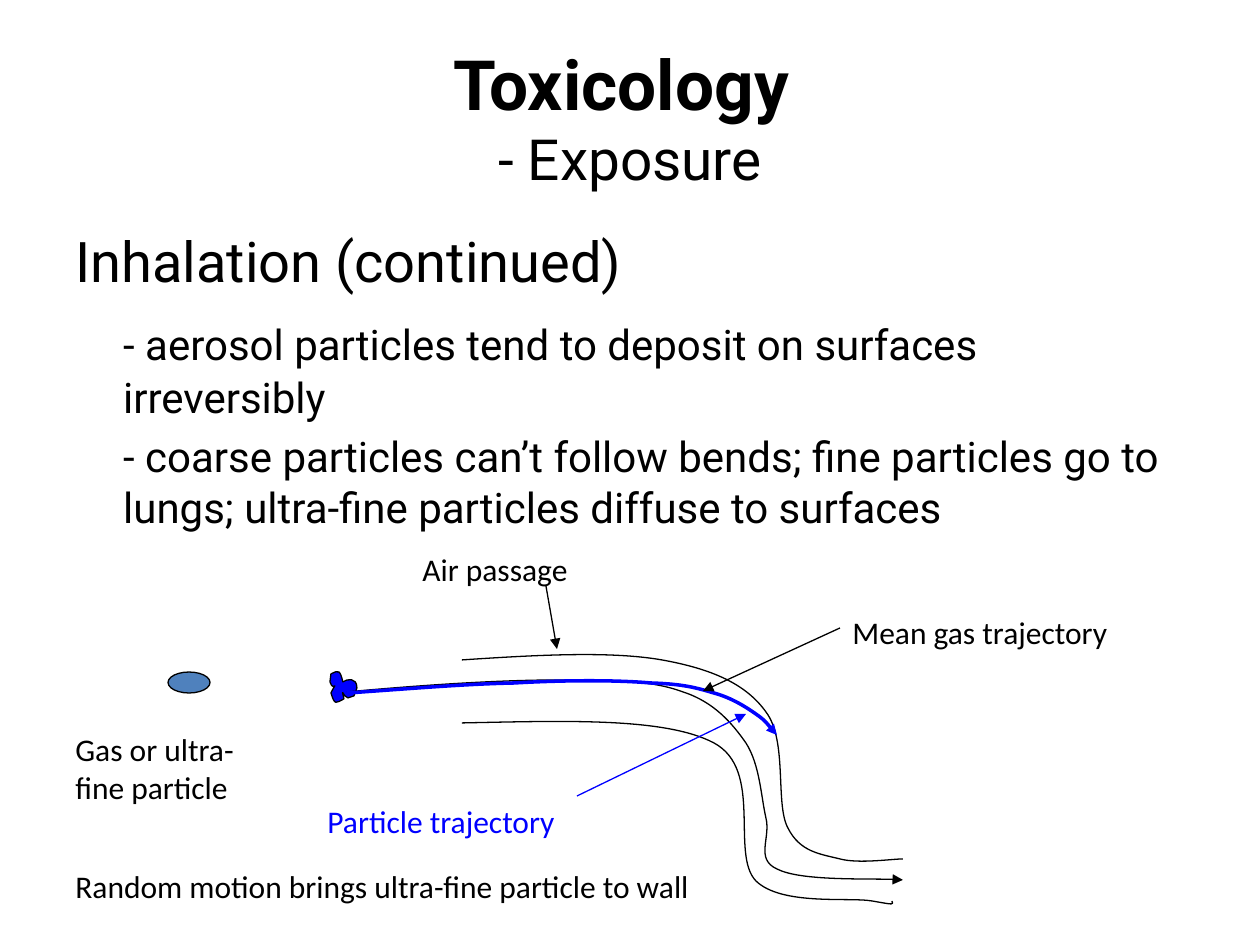
from lxml import etree
from pptx import Presentation
from pptx import util as u
from pptx.dml.color import RGBColor
from pptx.enum import shapes, text
from pptx.oxml.ns import qn

PX = u.Inches(1) / 126
THEME = {
    "black": RGBColor(0, 0, 0), "blue": RGBColor(0, 0, 255),
    "gas": RGBColor(0x4F, 0x81, 0xBD),
    "heading_font": "Roboto", "label_font": "Calibri",
    "title": 39.6, "subtitle": 32.4, "heading": 32, "body": 24, "label": 18,
    "thin": 0.75, "thick": 2,
}

# Content: boxes are (left, top, width, height) in px
TITLE_BOX, BODY_BOX = (63, 38, 1134, 157), (63, 220, 1134, 624)
TITLE = [("Toxicology ", "title", True), ("- Exposure", "subtitle", False)]
# Each paragraph: space before in points, then runs of (text, size)
BODY = [
    (0, [("Inhalation (continued)", "heading")]),
    (6.4, [("\t", "heading"),
           ("- aerosol particles tend to deposit on surfaces irreversibly", "body")]),
    (4.8, [("\t- coarse particles can’t follow bends; fine particles go to lungs; "
            "ultra-fine particles diffuse to surfaces", "body")]),
]
LABELS = [
    ("Mean gas trajectory", (840, 607, 420, 50), "black"),
    ("Particle trajectory", (315, 796, 420, 50), "blue"),
    ("Air passage", (410, 544, 525, 50), "black"),
    ("Gas or ultra-fine particle", (63, 724, 189, 126), "black"),
    ("Random motion brings ultra-fine particle to wall", (63, 861, 683, 50), "black"),
]
POINTERS = [
    ((577, 796), (746, 714), "blue"),
    ((840, 628), (703, 691), "black"),
    ((546, 586), (557, 649), "black"),
]
GAS_PARTICLE = (168, 672, 42, 21)

# Bezier chains: a start point, then two control points and an end per curve
LOWER_WALL = [
    (462, 723), (563, 721), (665, 717), (714, 743), (764, 770), (730, 854), (756, 881),
    (782, 906), (849, 897), (872, 901), (895, 905), (893, 905), (892, 901)]
UPPER_WALL = [
    (462, 660), (537, 655), (611, 651), (662, 660), (712, 669), (746, 684), (766, 712),
    (788, 741), (775, 804), (788, 828), (800, 852), (820, 854), (840, 859),
    (859, 864), (892, 859), (903, 859)]
COARSE_PARTICLE = [
    (343, 682), (340, 670), (339, 670), (331, 674), (331, 677), (330, 679), (330, 682),
    (334, 694), (339, 677), (331, 693), (335, 706), (336, 703), (344, 699),
    (341, 685), (343, 697), (348, 698), (350, 698), (352, 696), (354, 696),
    (355, 693), (357, 690), (357, 688), (357, 677), (347, 679), (343, 682)]
GAS_PATH = [
    (347, 692), (423, 685), (500, 680), (557, 680), (612, 680), (651, 680), (683, 692),
    (714, 702), (732, 723), (746, 743), (760, 765), (761, 796), (766, 818),
    (771, 838), (755, 859), (777, 869), (800, 881), (883, 878), (903, 880)]
PARTICLE_PATH = [
    (347, 693), (406, 689), (464, 684), (514, 683), (566, 680), (617, 680), (651, 683),
    (684, 684), (697, 688), (714, 693), (732, 698), (746, 707), (756, 714),
    (766, 721), (774, 732), (777, 735)]
# Points, line colour, line width, fill, arrow
CURVES = [
    (LOWER_WALL, "black", "thin", None, False),
    (UPPER_WALL, "black", "thin", None, False),
    (COARSE_PARTICLE, "black", "thin", "blue", False),
    (GAS_PATH, "black", "thin", None, True),
    (PARTICLE_PATH, "blue", "thick", None, True),
]


def emu(values):
    return [u.Emu(round(v * PX)) for v in values]


def set_font(font, face, size, color="black", bold=False):
    font.name, font.size, font.bold = THEME[face], u.Pt(THEME[size]), bold
    font.color.rgb = THEME[color]


def set_line(sp, color, width="thin", arrow=False):
    sp.line.color.rgb, sp.line.width = THEME[color], u.Pt(THEME[width])
    if arrow:
        etree.SubElement(sp.line._get_or_add_ln(), qn("a:tailEnd"), type="triangle")


def add_text_box(slide, box):
    tf = slide.shapes.add_textbox(*emu(box)).text_frame
    tf.word_wrap = True
    return tf


def bend_segments(sp):
    """Turn each three straight segments into one cubic Bezier curve."""
    segments = list(sp._element.iter(qn("a:lnTo")))
    for i in range(0, len(segments), 3):
        curve = etree.Element(qn("a:cubicBezTo"))
        segments[i].addprevious(curve)
        for segment in segments[i:i + 3]:
            curve.append(segment[0])
            segment.getparent().remove(segment)


def add_curve(slide, chain, color, width, fill, arrow):
    points = [emu(p) for p in chain]
    builder = slide.shapes.build_freeform(*points[0])
    builder.add_line_segments(points[1:], close=fill is not None)
    sp = builder.convert_to_shape()
    bend_segments(sp)
    sp.shadow.inherit = False
    if fill:
        sp.fill.solid()
        sp.fill.fore_color.rgb = THEME[fill]
    else:
        sp.fill.background()
    set_line(sp, color, width, arrow)


def main():
    prs = Presentation()
    prs.slide_width, prs.slide_height = u.Inches(10), u.Inches(7.5)
    slide = prs.slides.add_slide(prs.slide_layouts[5])

    # Title
    title = slide.shapes.title
    title.left, title.top, title.width, title.height = emu(TITLE_BOX)
    tf = title.text_frame
    tf.auto_size = text.MSO_AUTO_SIZE.NONE
    tf.vertical_anchor = text.MSO_ANCHOR.MIDDLE
    p = tf.paragraphs[0]
    p.alignment = text.PP_ALIGN.CENTER
    for i, (words, size, bold) in enumerate(TITLE):
        if i:
            p.add_line_break()
        r = p.add_run()
        r.text = words
        set_font(r.font, "heading_font", size, bold=bold)

    # Body text with a hanging indent
    tf = add_text_box(slide, BODY_BOX)
    indent = u.Inches(0.38)
    for i, (space, runs) in enumerate(BODY):
        p = tf.add_paragraph() if i else tf.paragraphs[0]
        p.space_before = u.Pt(space)
        pPr = p._p.get_or_add_pPr()
        pPr.set("marL", str(indent))
        pPr.set("indent", str(-indent))
        for words, size in runs:
            r = p.add_run()
            r.text = words
            set_font(r.font, "heading_font", size)

    # Air passage, particles and trajectories
    for curve in CURVES:
        add_curve(slide, *curve)
    sp = slide.shapes.add_shape(shapes.MSO_SHAPE.OVAL, *emu(GAS_PARTICLE))
    sp.shadow.inherit = False
    sp.fill.solid()
    sp.fill.fore_color.rgb = THEME["gas"]
    set_line(sp, "black")

    # Labels and their pointers
    for words, box, color in LABELS:
        p = add_text_box(slide, box).paragraphs[0]
        p.text = words
        set_font(p.font, "label_font", "label", color)
    for start, end, color in POINTERS:
        line = slide.shapes.add_connector(shapes.MSO_CONNECTOR.STRAIGHT, *emu(start + end))
        set_line(line, color, arrow=True)
        etree.SubElement(line._element.spPr, qn("a:effectLst"))

    prs.save("out.pptx")


if __name__ == "__main__":
    main()
